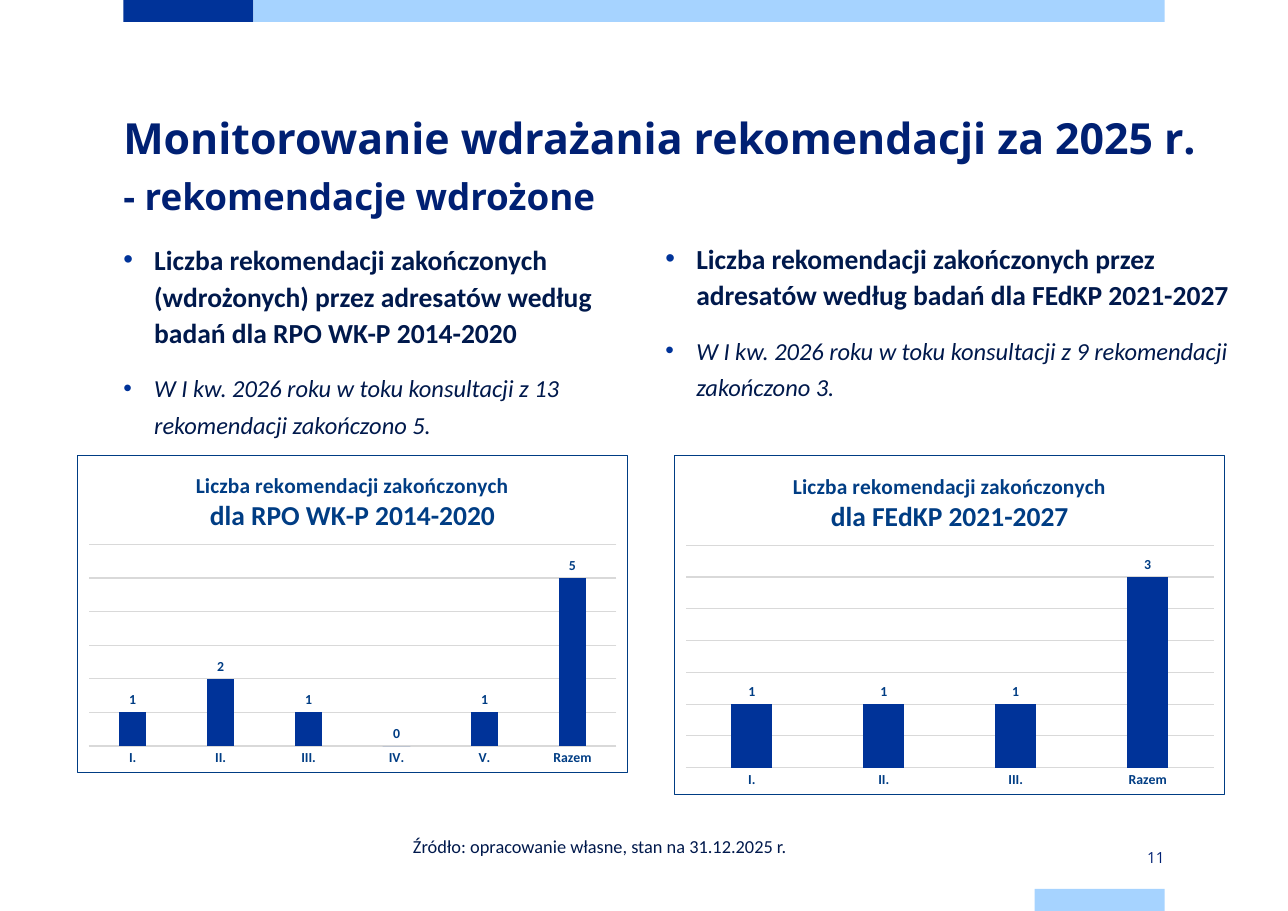
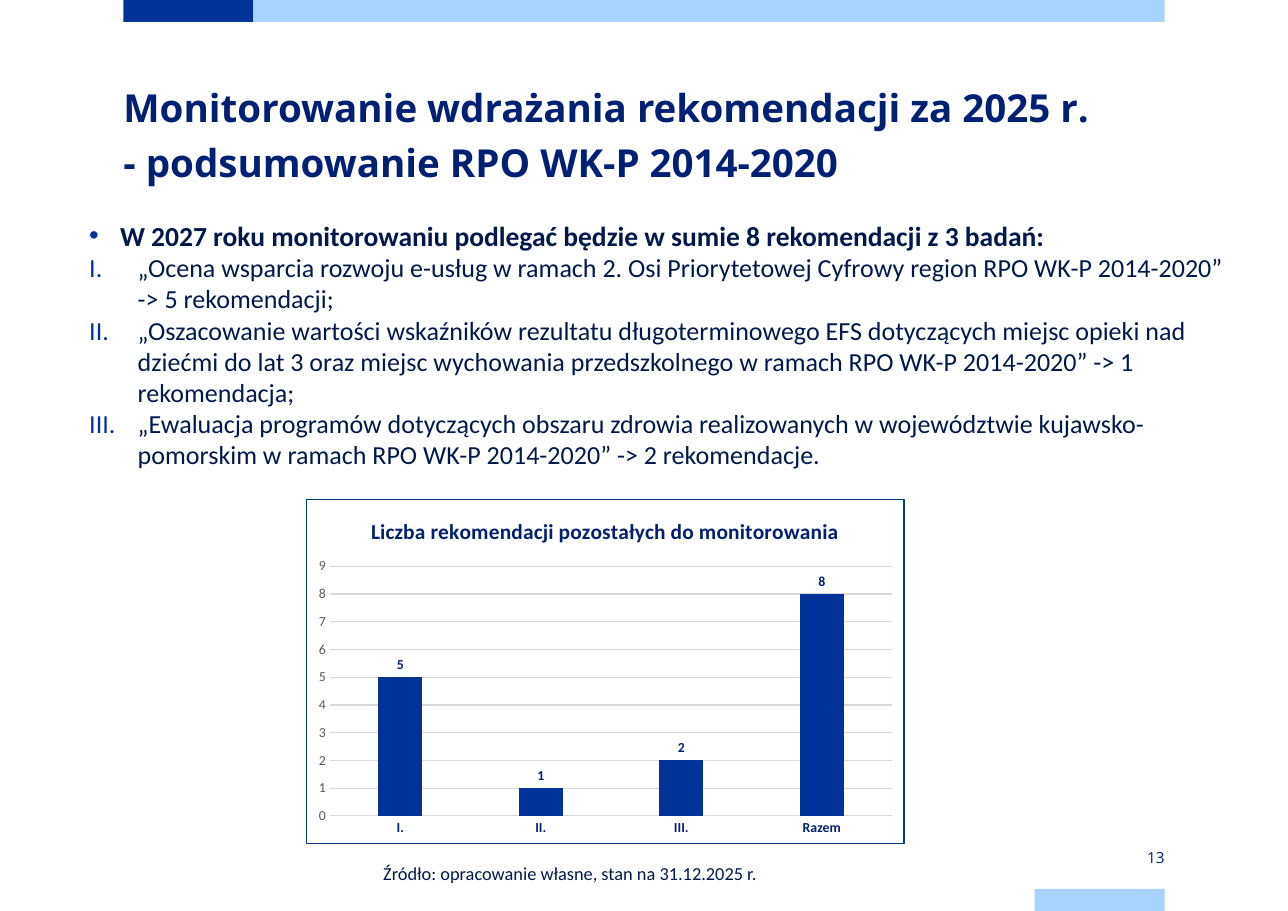
from pptx import Presentation
from pptx.chart.data import CategoryChartData
from pptx.dml.color import RGBColor
from pptx.enum.chart import XL_CHART_TYPE as ChartType, XL_LABEL_POSITION as LabelPosition
from pptx.enum.chart import XL_TICK_MARK as TickMark
from pptx.enum.shapes import MSO_SHAPE as Shape
from pptx.enum.text import MSO_ANCHOR as Anchor, PP_ALIGN as Align
from pptx.oxml import parse_xml
from pptx.oxml.ns import nsdecls
from pptx.util import Inches, Pt

BLUE, SKY, NAVY, INK, STEEL = "003399", "A6D3FF", "002073", "00194C", "003D84"
GRID, GREY = "D9D9D9", "595959"
BODY_FONT, TITLE_FONT = "Calibri", "Open Sans"

BANDS = [
    ((1.12, 0, 1.18, 0.2), BLUE),
    ((2.3, 0, 8.27, 0.2), SKY),
    ((9.39, 8.07, 1.18, 0.2), SKY),
]
PAGE_NUMBER_BOX = (9.39, 7.68, 1.18, 0.2)
SOURCE = "Źródło: opracowanie własne, stan na 31.12.2025 r."
HEADING = "Monitorowanie wdrażania rekomendacji za 2025 r."
CHART_HEADING = "Liczba rekomendacji zakończonych"

LEAD = dict(size=18, bold=True, bullet="•", indent=0.28, line=24, before=11)
REMARK = dict(size=16, italic=True, bullet="•", indent=0.28, line=24, before=11)
STUDY = dict(size=17, bullet="I.", indent=0.44)

SLIDES = [
    {
        "page": "11",
        "title_box": (1.12, 0.98, 9.76, 1.18),
        "title": [(HEADING, 28), ("- rekomendacje wdrożone", 24)],
        "bodies": [
            ((1.12, 2.17, 4.53, 5.12), [
                ("Liczba rekomendacji zakończonych (wdrożonych) przez adresatów według badań "
                 "dla RPO WK-P 2014-2020", LEAD),
                ("W I kw. 2026 roku w toku konsultacji z 13 rekomendacji zakończono 5.", REMARK),
            ]),
            ((6.04, 2.16, 5.14, 5.12), [
                ("Liczba rekomendacji zakończonych przez adresatów według badań "
                 "dla FEdKP 2021-2027", LEAD),
                ("W I kw. 2026 roku w toku konsultacji z 9 rekomendacji zakończono 3.", REMARK),
            ]),
        ],
        "source_box": (3.65, 7.53, 4.4, 0.3),
        "charts": [
            dict(box=(0.7, 4.13, 5, 2.89), color=STEEL, top=6, step=1,
                 title=[(CHART_HEADING, 14), ("dla RPO WK-P 2014-2020", 18)],
                 counts={"I.": 1, "II.": 2, "III.": 1, "IV.": 0, "V.": 1, "Razem": 5}),
            dict(box=(6.12, 4.13, 5, 3.09), color=STEEL, top=3.5, step=0.5,
                 title=[(CHART_HEADING, 14), ("dla FEdKP 2021-2027", 18)],
                 counts={"I.": 1, "II.": 1, "III.": 1, "Razem": 3}),
        ],
    },
    {
        "page": "13",
        "title_box": (1.12, 0.68, 9.45, 1.18),
        "title": [(HEADING, 25.2), ("- podsumowanie RPO WK-P 2014-2020", 25.2)],
        "bodies": [
            ((0.81, 1.95, 10.32, 5.71), [
                ("W 2027 roku monitorowaniu podlegać będzie w sumie 8 rekomendacji z 3 badań:", LEAD),
                ("„Ocena wsparcia rozwoju e-usług w ramach 2. Osi Priorytetowej Cyfrowy region "
                 "RPO WK-P 2014-2020” -> 5 rekomendacji;", STUDY),
                ("„Oszacowanie wartości wskaźników rezultatu długoterminowego EFS dotyczących "
                 "miejsc opieki nad dziećmi do lat 3 oraz miejsc wychowania przedszkolnego "
                 "w ramach RPO WK-P 2014-2020” -> 1 rekomendacja;", STUDY),
                ("„Ewaluacja programów dotyczących obszaru zdrowia realizowanych w województwie "
                 "kujawsko-pomorskim w ramach RPO WK-P 2014-2020” -> 2 rekomendacje.", STUDY),
            ]),
        ],
        "source_box": (3.38, 7.78, 4.4, 0.3),
        "charts": [
            dict(box=(2.78, 4.53, 5.43, 3.13), color=NAVY, top=9, step=1, show_scale=True,
                 title=[("Liczba rekomendacji pozostałych do monitorowania", 14)],
                 counts={"I.": 5, "II.": 1, "III.": 2, "Razem": 8}),
        ],
    },
]


def rgb(color):
    return RGBColor.from_string(color)


def place(box):
    return [Inches(length) for length in box]


def style(font, size, color, name=BODY_FONT, bold=False, italic=False):
    font.size, font.name, font.bold, font.italic = Pt(size), name, bold, italic
    font.color.rgb = rgb(color)


def add_bullet(paragraph, bullet, indent):
    properties = paragraph._p.get_or_add_pPr()
    properties.set("marL", str(Inches(indent)))
    properties.set("indent", str(-Inches(indent)))
    marks = [f'<a:buClr {nsdecls("a")}><a:srgbClr val="{BLUE}"/></a:buClr>']
    if bullet == "•":
        marks += [f'<a:buFont {nsdecls("a")} typeface="Arial"/>',
                  f'<a:buChar {nsdecls("a")} char="•"/>']
    else:
        marks.append(f'<a:buAutoNum {nsdecls("a")} type="romanUcPeriod"/>')
    for mark in marks:
        properties.append(parse_xml(mark))


def write(paragraph, text, size=12, color=INK, font=BODY_FONT, bold=False, italic=False,
          bullet=None, indent=0, line=None, before=None, align=None):
    if bullet:
        add_bullet(paragraph, bullet, indent)
    if line:
        paragraph.line_spacing = Pt(line)
    if before:
        paragraph.space_before = Pt(before)
    if align is not None:
        paragraph.alignment = align
    run = paragraph.add_run()
    run.text = text
    style(run.font, size, color, font, bold, italic)


def add_frame(slide, box, insets=(0, 0, 0, 0), anchor=Anchor.TOP):
    frame = slide.shapes.add_textbox(*place(box)).text_frame
    frame.word_wrap = True
    frame.vertical_anchor = anchor
    frame.margin_left, frame.margin_top, frame.margin_right, frame.margin_bottom = place(insets)
    return frame


def add_title(slide, box, lines):
    paragraph = add_frame(slide, box).paragraphs[0]
    for index, (text, size) in enumerate(lines):
        if index:
            paragraph.add_line_break()
        write(paragraph, text, size=size, color=NAVY, font=TITLE_FONT, bold=True, line=36)


def add_body(slide, box, items):
    frame = add_frame(slide, box)
    for index, (text, look) in enumerate(items):
        paragraph = frame.add_paragraph() if index else frame.paragraphs[0]
        write(paragraph, text, **(look if index else {**look, "before": None}))


def add_bands(slide):
    for box, color in BANDS:
        band = slide.shapes.add_shape(Shape.RECTANGLE, *place(box))
        band.shadow.inherit = False
        band.fill.solid()
        band.fill.fore_color.rgb = rgb(color)
        band.line.fill.background()


def add_count_chart(slide, box, title, counts, color, top, step, show_scale=False):
    data = CategoryChartData()
    data.categories = list(counts)
    data.add_series(title[0][0] if show_scale else "Series 1", list(counts.values()))
    chart = slide.shapes.add_chart(ChartType.COLUMN_CLUSTERED, *place(box), data).chart
    style(chart.font, 10, "000000")
    chart.has_legend = False

    chart.has_title = True
    chart.chart_title.include_in_layout = False
    heading = chart.chart_title.text_frame
    for index, (text, size) in enumerate(title):
        paragraph = heading.add_paragraph() if index else heading.paragraphs[0]
        write(paragraph, text, size=size, color=color, bold=True)

    plot = chart.plots[0]
    plot.gap_width, plot.overlap, plot.vary_by_categories = 219, -27, False
    columns = plot.series[0].format.fill
    columns.solid()
    columns.fore_color.rgb = rgb(BLUE)
    plot.has_data_labels = True
    labels = plot.data_labels
    labels.show_value = True
    labels.position = LabelPosition.OUTSIDE_END
    style(labels.font, 9, color, bold=True)

    category_axis, scale = chart.category_axis, chart.value_axis
    for axis in (category_axis, scale):
        axis.major_tick_mark = axis.minor_tick_mark = TickMark.NONE
    style(category_axis.tick_labels.font, 9, color, bold=True)
    style(scale.tick_labels.font, 9, GREY)
    scale.minimum_scale, scale.maximum_scale, scale.major_unit = 0, top, step
    scale.format.line.fill.background()
    scale.visible = show_scale
    for line in (category_axis.format.line, scale.major_gridlines.format.line):
        line.color.rgb = rgb(GRID)
        line.width = Pt(0.75)

    chart._chartSpace.chart.addnext(parse_xml(
        f'<c:spPr {nsdecls("c", "a")}><a:noFill/><a:ln w="{Pt(0.75)}"><a:solidFill>'
        f'<a:srgbClr val="{STEEL}"/></a:solidFill></a:ln></c:spPr>'))


def main():
    deck = Presentation()
    deck.slide_width, deck.slide_height = Inches(11.69), Inches(8.27)
    for content in SLIDES:
        slide = deck.slides.add_slide(deck.slide_layouts[6])
        add_bands(slide)
        add_title(slide, content["title_box"], content["title"])
        for box, items in content["bodies"]:
            add_body(slide, box, items)
        number = add_frame(slide, PAGE_NUMBER_BOX, (0, 0.08, 0, 0.08), Anchor.MIDDLE)
        write(number.paragraphs[0], content["page"], size=10, color=NAVY, font=TITLE_FONT,
              align=Align.RIGHT)
        source = add_frame(slide, content["source_box"], (0.1, 0.05, 0.1, 0.05))
        write(source.paragraphs[0], SOURCE)
        for chart in content["charts"]:
            add_count_chart(slide, **chart)
    deck.save("out.pptx")


if __name__ == "__main__":
    main()
